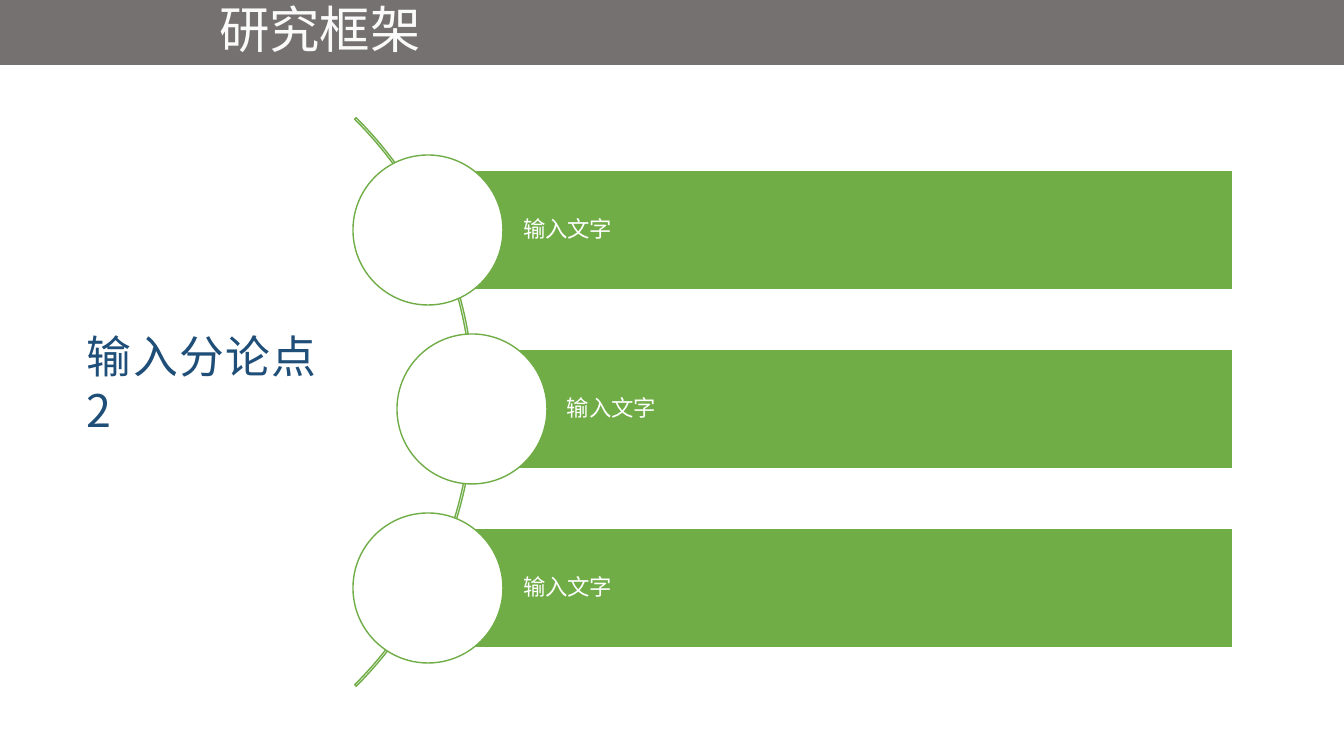
from pptx import Presentation
from pptx.dml.color import RGBColor
from pptx.enum.shapes import MSO_SHAPE as Shape
from pptx.enum.text import MSO_ANCHOR as Anchor, PP_ALIGN as Align
from pptx.util import Emu, Pt
from lxml.etree import SubElement
from pptx.oxml.ns import qn

COLORS = {"green": "70AD47", "gray": "767171", "white": "FFFFFF",
          "navy": "1F4E79", "title": "FAFAFA"}
FONT = "Noto Sans CJK SC"
BAR_INSETS = (95, 4, 4, 4)


def px(length):
    """Turn pixels into EMU at 100.8 pixels to the inch."""
    return Emu(round(length * 914400 / 100.8))


def rgb(name):
    """Look up a named colour."""
    return RGBColor.from_string(COLORS[name])


def add_part(slide, kind, box, fill=None, line=None):
    """Add a preset shape with a flat fill and a thin outline."""
    part = slide.shapes.add_shape(kind, *map(px, box))
    part.shadow.inherit = False
    if fill:
        part.fill.solid()
        part.fill.fore_color.rgb = rgb(fill)
    else:
        part.fill.background()
    if line:
        part.line.color.rgb = rgb(line)
        part.line.width = Pt(1)
    else:
        part.line.fill.background()
    return part


def write(part, text, size, color, align=Align.LEFT, anchor=Anchor.TOP,
          insets=(10, 5, 10, 5), spacing=None):
    """Write one formatted paragraph into a shape or text box."""
    frame = part.text_frame
    frame.word_wrap = True
    frame.vertical_anchor = anchor
    (frame.margin_left, frame.margin_top,
     frame.margin_right, frame.margin_bottom) = map(px, insets)
    paragraph = frame.paragraphs[0]
    paragraph.alignment = align
    if spacing:
        paragraph.line_spacing = spacing
    run = paragraph.add_run()
    run.text = text
    run.font.size = Pt(size)
    run.font.color.rgb = rgb(color)
    run.font.name = FONT
    SubElement(run.font._element, qn("a:ea"), typeface=FONT)


def add_curved_list(slide, left, top, right, items):
    """Place bars headed by circles along an arc."""
    bar_height, pitch, diameter, arc_size = 120, 179, 150, 804
    arc = add_part(slide, Shape.BLOCK_ARC, (left - 758, top - 170, arc_size, arc_size),
                   line="green")
    for index, value in enumerate((189, 27, 0.0027)):
        arc.adjustments[index] = value
    for index, (label, indent) in enumerate(items):
        bar_left, bar_top = left + indent, top + index * pitch
        bar = add_part(slide, Shape.RECTANGLE,
                       (bar_left, bar_top, right - bar_left, bar_height),
                       "green", "white")
        write(bar, label, 16, "white", anchor=Anchor.MIDDLE,
              insets=BAR_INSETS, spacing=0.9)
        add_part(slide, Shape.OVAL,
                 (bar_left - diameter / 2, bar_top + (bar_height - diameter) / 2,
                  diameter, diameter), "white", "green")


def add_topic(slide, left, top, width, height):
    """Place the heading beside the list."""
    topic = slide.shapes.add_textbox(*map(px, (left, top, width, height)))
    write(topic, "输入分论点2", 32, "navy", align=Align.JUSTIFY)


def add_header(slide, left, top, width, height):
    """Place the title band across the slide."""
    add_part(slide, Shape.RECTANGLE, (left, top, width, height), "gray")
    title = slide.shapes.add_textbox(
        *map(px, (left + 148, top - 6, 344, height + 5)))
    write(title, "研究框架", 36, "title", align=Align.CENTER)


def main():
    """Build and save the slide."""
    deck = Presentation()
    deck.slide_width, deck.slide_height = px(1344), px(756)
    slide = deck.slides.add_slide(deck.slide_layouts[6])
    add_curved_list(slide, 428, 170, 1233,
                    [("输入文字", 0), ("输入文字", 44), ("输入文字", 0)])
    add_topic(slide, 77, 324, 250, 64)
    add_header(slide, 0, -1, 1344, 66)
    deck.save("out.pptx")


if __name__ == "__main__":
    main()
